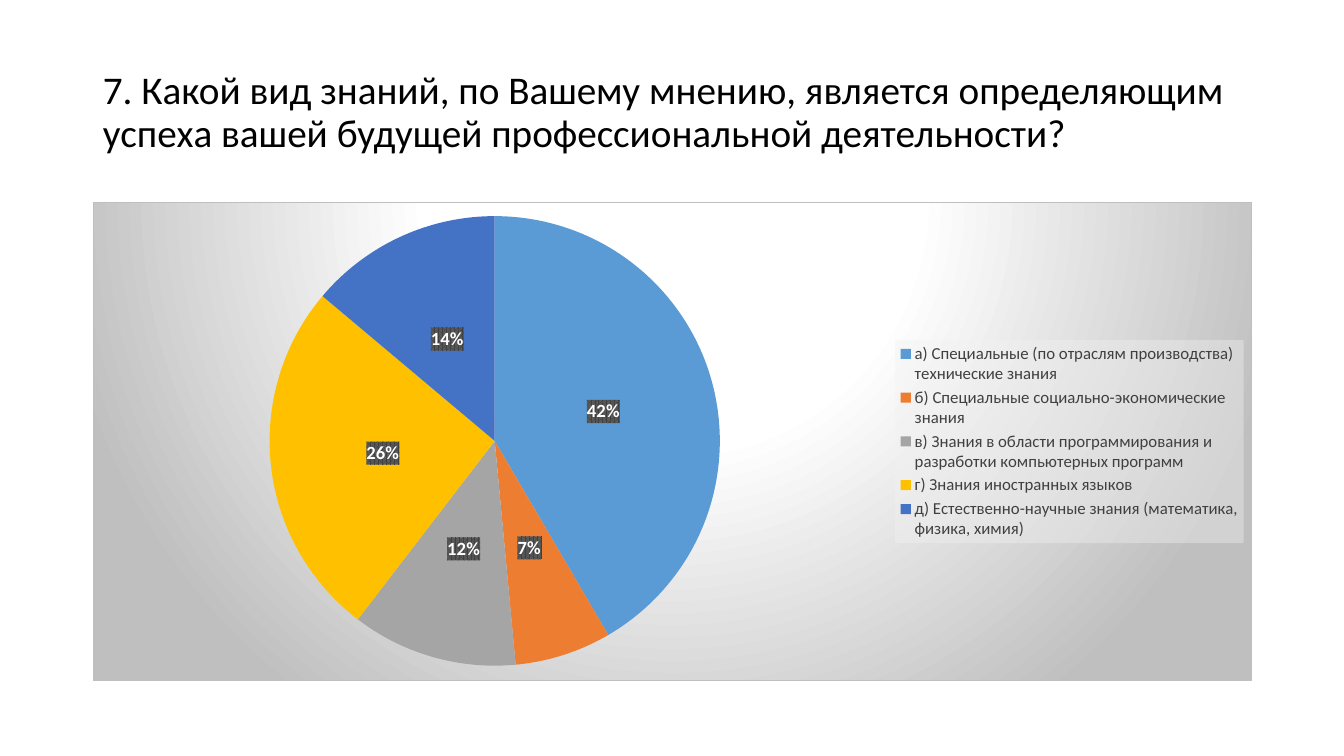
import dataclasses
import typing

import lxml.etree
import pptx
import pptx.chart.data
import pptx.dml.color
import pptx.enum.chart
import pptx.enum.text
import pptx.oxml
import pptx.oxml.ns
import pptx.util

PX = 9144


@dataclasses.dataclass(frozen=True)
class Theme:
    font: str = "Calibri"
    black: str = "000000"
    white: str = "FFFFFF"
    legend_text: str = "404040"
    legend_back: str = "F2F2F2"
    label_front: str = "404040"
    label_back: str = "595959"
    edge: str = "BFBFBF"
    title_pt: float = 28
    chart_pt: float = 10
    legend_pt: float = 12
    label_pt: float = 13.3


@dataclasses.dataclass(frozen=True)
class Box:
    left: int
    top: int
    width: int
    height: int

    def emu(self) -> list[int]:
        return [v * PX for v in dataclasses.astuple(self)]


@dataclasses.dataclass(frozen=True)
class Slice:
    name: str
    value: int
    color: str


THEME = Theme()
TITLE = (
    "7. Какой вид знаний, по Вашему мнению, является определяющим "
    "успеха вашей будущей профессиональной деятельности?"
)
TITLE_BOX = Box(92, 40, 1150, 145)
CHART_BOX = Box(92, 200, 1150, 476)
PIE_BOX = Box(175, 14, 447, 447)
LEGEND_BOX = Box(796, 137, 346, 202)
SLICES = [
    Slice("а) Специальные (по отраслям производства) технические знания", 42, "5B9BD5"),
    Slice("б) Специальные социально-экономические знания", 7, "ED7D31"),
    Slice("в) Знания в области программирования и разработки компьютерных программ", 12, "A5A5A5"),
    Slice("г) Знания иностранных языков", 26, "FFC000"),
    Slice("д) Естественно-научные знания (математика, физика, химия)", 14, "4472C4"),
]


def rgb(color: str) -> pptx.dml.color.RGBColor:
    return pptx.dml.color.RGBColor.from_string(color)


def set_all(target: typing.Any, values: dict[str, typing.Any]) -> None:
    for name, value in values.items():
        setattr(target, name, value)


def set_font(font: typing.Any, size: float, color: str, bold: bool = False) -> None:
    set_all(font, {"name": THEME.font, "size": pptx.util.Pt(size), "bold": bold})
    font.color.rgb = rgb(color)


def solid(color: str, inner: str = "") -> str:
    return f'<a:solidFill><a:srgbClr val="{color}">{inner}</a:srgbClr></a:solidFill>'


def chart_xml(tag: str, body: str) -> lxml.etree._Element:
    ns = pptx.oxml.ns.nsdecls("c", "a")
    return pptx.oxml.parse_xml(f"<c:{tag} {ns}>{body}</c:{tag}>")


def add_format(parent: lxml.etree._Element, body: str) -> None:
    parent.find(pptx.oxml.ns.qn("c:txPr")).addprevious(chart_xml("spPr", body))


def set_layout(parent: lxml.etree._Element, index: int, box: Box, target: str = "") -> None:
    for old in parent.findall(pptx.oxml.ns.qn("c:layout")):
        parent.remove(old)
    parts = {
        "x": box.left / CHART_BOX.width,
        "y": box.top / CHART_BOX.height,
        "w": box.width / CHART_BOX.width,
        "h": box.height / CHART_BOX.height,
    }
    modes = '<c:xMode val="edge"/><c:yMode val="edge"/>'
    sizes = "".join(f'<c:{k} val="{v:.4f}"/>' for k, v in parts.items())
    body = f"<c:manualLayout>{target}{modes}{sizes}</c:manualLayout>"
    parent.insert(index, chart_xml("layout", body))


def add_title(s: typing.Any) -> None:
    sp = s.shapes.title
    set_all(sp, dict(zip(("left", "top", "width", "height"), TITLE_BOX.emu())))
    tf = sp.text_frame
    set_all(tf, {
        "word_wrap": True,
        "auto_size": pptx.enum.text.MSO_AUTO_SIZE.NONE,
        "vertical_anchor": pptx.enum.text.MSO_ANCHOR.MIDDLE,
    })
    p = tf.paragraphs[0]
    set_all(p, {"alignment": pptx.enum.text.PP_ALIGN.LEFT, "line_spacing": 0.9})
    r = p.add_run()
    r.text = TITLE
    set_font(r.font, THEME.title_pt, THEME.black)


def add_pie(s: typing.Any) -> None:
    data = pptx.chart.data.CategoryChartData()
    data.categories = [part.name for part in SLICES]
    data.add_series("Series 1", [part.value for part in SLICES])
    chart = s.shapes.add_chart(
        pptx.enum.chart.XL_CHART_TYPE.PIE, *CHART_BOX.emu(), data
    ).chart
    set_all(chart, {"has_title": False, "has_legend": True})
    set_font(chart.font, THEME.chart_pt, THEME.black)

    set_all(chart.legend, {
        "position": pptx.enum.chart.XL_LEGEND_POSITION.RIGHT,
        "include_in_layout": False,
    })
    set_font(chart.legend.font, THEME.legend_pt, THEME.legend_text)

    plot = chart.plots[0]
    set_all(plot, {"vary_by_categories": True, "has_data_labels": True})
    labels = plot.data_labels
    set_all(labels, {
        "number_format": "0%",
        "number_format_is_linked": False,
        "show_percentage": True,
        "show_value": False,
        "position": pptx.enum.chart.XL_LABEL_POSITION.CENTER,
    })
    set_font(labels.font, THEME.label_pt, THEME.white, bold=True)
    for i, part in enumerate(SLICES):
        fill = plot.series[0].points[i].format.fill
        fill.solid()
        fill.fore_color.rgb = rgb(part.color)

    root = chart.element
    legend = root.xpath("c:chart/c:legend")[0]
    set_layout(root.xpath("c:chart/c:plotArea")[0], 0, PIE_BOX, '<c:layoutTarget val="inner"/>')
    set_layout(legend, 1, LEGEND_BOX)
    add_format(legend, solid(THEME.legend_back, '<a:alpha val="39000"/>'))
    add_format(
        root.xpath(".//c:dLbls")[0],
        f'<a:pattFill prst="pct75"><a:fgClr><a:srgbClr val="{THEME.label_front}"/></a:fgClr>'
        f'<a:bgClr><a:srgbClr val="{THEME.label_back}"/></a:bgClr></a:pattFill>',
    )
    stops = "".join(
        f'<a:gs pos="{pos * 1000}"><a:srgbClr val="{color}"/></a:gs>'
        for pos, color in ((0, THEME.white), (39, THEME.white), (100, THEME.edge))
    )
    add_format(
        root,
        f'<a:gradFill><a:gsLst>{stops}</a:gsLst><a:path path="circle">'
        '<a:fillToRect l="50000" t="-80000" r="50000" b="180000"/></a:path></a:gradFill>'
        f'<a:ln w="{pptx.util.Pt(0.75)}">{solid(THEME.edge)}</a:ln>',
    )


def main() -> None:
    prs = pptx.Presentation()
    set_all(prs, {"slide_width": 1333 * PX, "slide_height": 750 * PX})
    s = prs.slides.add_slide(prs.slide_layouts[5])
    add_title(s)
    add_pie(s)
    prs.save("out.pptx")


if __name__ == "__main__":
    main()
